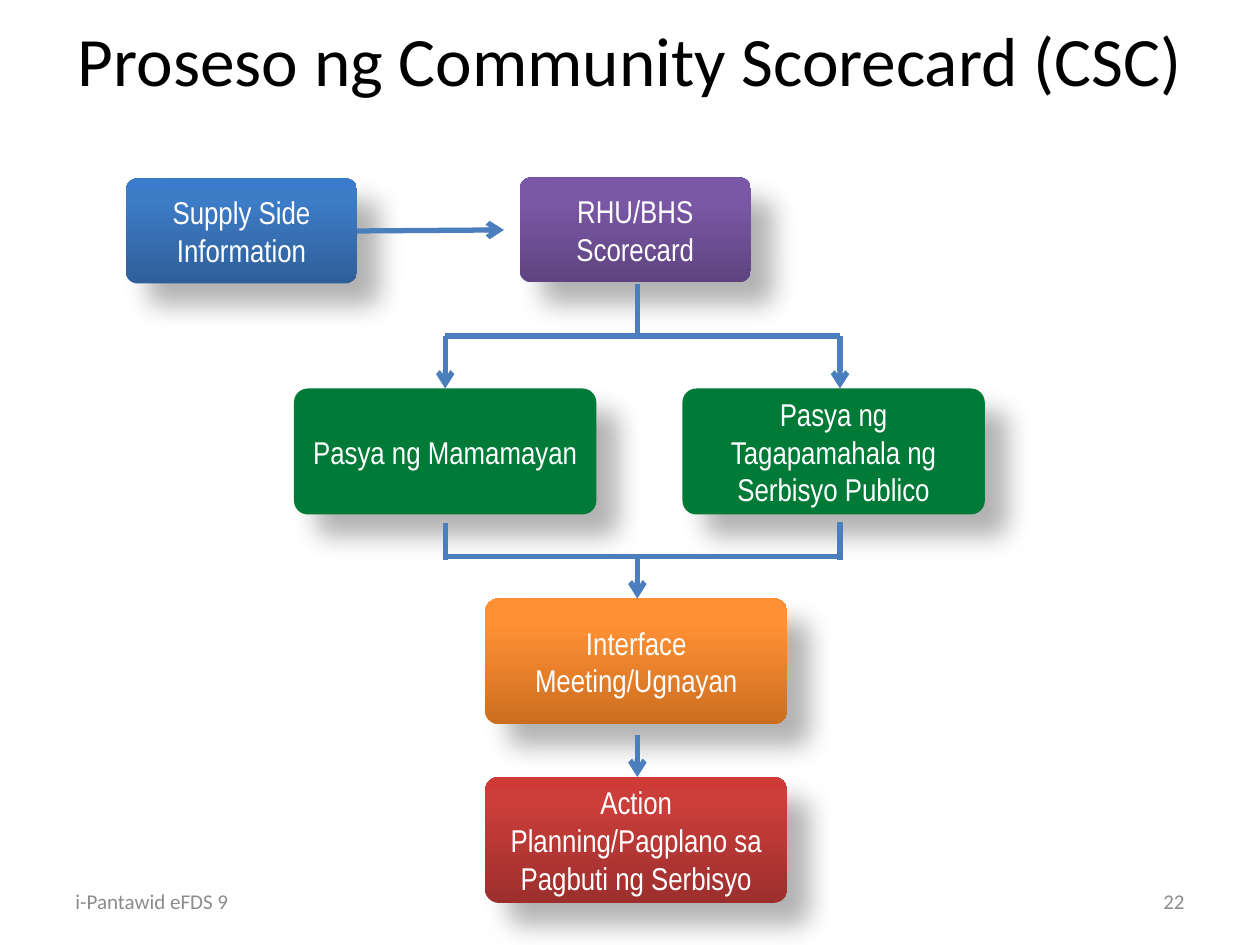
from copy import deepcopy
from dataclasses import dataclass

from lxml.etree import SubElement
from pptx import Presentation
from pptx.dml.color import RGBColor
from pptx.enum.shapes import MSO_CONNECTOR, MSO_SHAPE
from pptx.enum.text import MSO_ANCHOR, PP_ALIGN
from pptx.oxml.ns import qn
from pptx.util import Inches, Pt

COLUMNS, ROWS = 120, 90
WIDTH, HEIGHT = Inches(10), Inches(7.5)
FLOW_COLOR = "4B7EBC"
GREEN = ("007A37",)


@dataclass(frozen=True)
class Step:
    label: str
    col: float
    row: float
    colors: tuple[str, ...]
    cols: float = 28.8
    rows: float = 12


@dataclass(frozen=True)
class Flow:
    start: tuple[float, float]
    end: tuple[float, float]
    arrow: bool = False


SOURCE_SIZE = {"cols": 22, "rows": 10}
STEPS = [
    Step("Interface Meeting/Ugnayan", 46.2, 57, ("CC6E20", "FF9034", "FF9136")),
    Step("Supply Side Information", 12, 17, ("2F5F99", "3D7CC7", "3A7CCB"), **SOURCE_SIZE),
    Step("Pasya ng Mamamayan", 28, 37, GREEN),
    Step("Pasya ng Tagapamahala ng Serbisyo Publico", 65, 37, GREEN),
    Step("Action Planning/Pagplano sa Pagbuti ng Serbisyo", 46.2, 74, ("9C2F2D", "CB3E3A", "CE3B37")),
    Step("RHU/BHS Scorecard", 49.5, 16.9, ("5F4480", "7B58A6", "7C57A8"), **SOURCE_SIZE),
]

LEFT, CENTER, RIGHT = 42.4, 60.7, 80
SPLIT, MERGE = 32, 53
FLOWS = [
    Flow((34, 22), (48, 21.9), arrow=True),
    Flow((CENTER, 27), (CENTER, SPLIT)),
    Flow((LEFT, SPLIT), (RIGHT, SPLIT)),
    Flow((LEFT, SPLIT), (LEFT, 37), arrow=True),
    Flow((RIGHT, SPLIT), (RIGHT, 37), arrow=True),
    Flow((LEFT, MERGE), (RIGHT, MERGE)),
    Flow((LEFT, 49.8), (LEFT, 53.3)),
    Flow((RIGHT, 49.7), (RIGHT, 53.3)),
    Flow((CENTER, MERGE), (CENTER, 57), arrow=True),
    Flow((CENTER, 70), (CENTER, 74), arrow=True),
]


def color(value: str) -> RGBColor:
    return RGBColor.from_string(value)


def x(col: float) -> int:
    return round(WIDTH * col / COLUMNS)


def y(row: float) -> int:
    return round(HEIGHT * row / ROWS)


def write(shape, text: str, *, size: float, font: str, fill: str,
          align=PP_ALIGN.CENTER, anchor=MSO_ANCHOR.MIDDLE) -> None:
    frame = shape.text_frame
    frame.word_wrap = True
    frame.vertical_anchor = anchor
    paragraph = frame.paragraphs[0]
    paragraph.alignment = align
    run = paragraph.add_run()
    run.text = text
    run.font.size = Pt(size)
    run.font.name = font
    run.font.color.rgb = color(fill)


def paint(shape, colors: tuple[str, ...]) -> None:
    if len(colors) == 1:
        shape.fill.solid()
        shape.fill.fore_color.rgb = color(colors[0])
        return
    shape.fill.gradient()
    shape.fill.gradient_angle = 90
    first_stop = shape.element.spPr.find(".//" + qn("a:gs"))
    first_stop.addnext(deepcopy(first_stop))
    for stop, position, value in zip(shape.fill.gradient_stops, (0, 0.8, 1), colors):
        stop.position = position
        stop.color.rgb = color(value)


def cast_shadow(shape) -> None:
    shape.shadow.inherit = False
    effects = shape.element.spPr.find(qn("a:effectLst"))
    shadow = SubElement(effects, qn("a:outerShdw"), blurRad=str(Pt(15)), dist=str(Pt(18)),
                        dir=str(45 * 60000), algn="tl", rotWithShape="0")
    tone = SubElement(shadow, qn("a:srgbClr"), val="000000")
    SubElement(tone, qn("a:alpha"), val="30000")


def draw_step(slide, step: Step) -> None:
    box = slide.shapes.add_shape(MSO_SHAPE.ROUNDED_RECTANGLE, x(step.col), y(step.row),
                                 x(step.cols), y(step.rows))
    box.adjustments[0] = 0.11
    box.line.fill.background()
    paint(box, step.colors)
    cast_shadow(box)
    write(box, step.label, size=18, font="Arial Narrow", fill="FFFFFF")


def draw_flow(slide, flow: Flow) -> None:
    connector = slide.shapes.add_connector(
        MSO_CONNECTOR.STRAIGHT, x(flow.start[0]), y(flow.start[1]), x(flow.end[0]), y(flow.end[1]))
    connector.line.color.rgb = color(FLOW_COLOR)
    connector.line.width = Pt(3)
    properties = connector.element.spPr
    if flow.arrow:
        SubElement(properties.find(qn("a:ln")), qn("a:tailEnd"), type="arrow")
    SubElement(properties, qn("a:effectLst"))


def draw_footer(slide, text: str, col: float, align) -> None:
    footer = slide.shapes.add_textbox(x(col), y(83.4), x(28), y(4.8))
    write(footer, text, size=12, font="Calibri", fill="8C8C8C", align=align)


def main() -> None:
    deck = Presentation()
    deck.slide_width, deck.slide_height = WIDTH, HEIGHT
    slide = deck.slides.add_slide(deck.slide_layouts[5])

    heading = slide.shapes.title
    heading.left, heading.top, heading.width, heading.height = x(6), y(1), x(108), y(15)
    write(heading, "Proseso ng Community Scorecard (CSC)", size=39.6, font="Calibri",
          fill="000000", anchor=MSO_ANCHOR.TOP)

    draw_footer(slide, "i-Pantawid eFDS 9", 6, PP_ALIGN.LEFT)
    draw_footer(slide, "22", 86, PP_ALIGN.RIGHT)
    for step in STEPS:
        draw_step(slide, step)
    for flow in FLOWS:
        draw_flow(slide, flow)
    deck.save("out.pptx")


if __name__ == "__main__":
    main()
